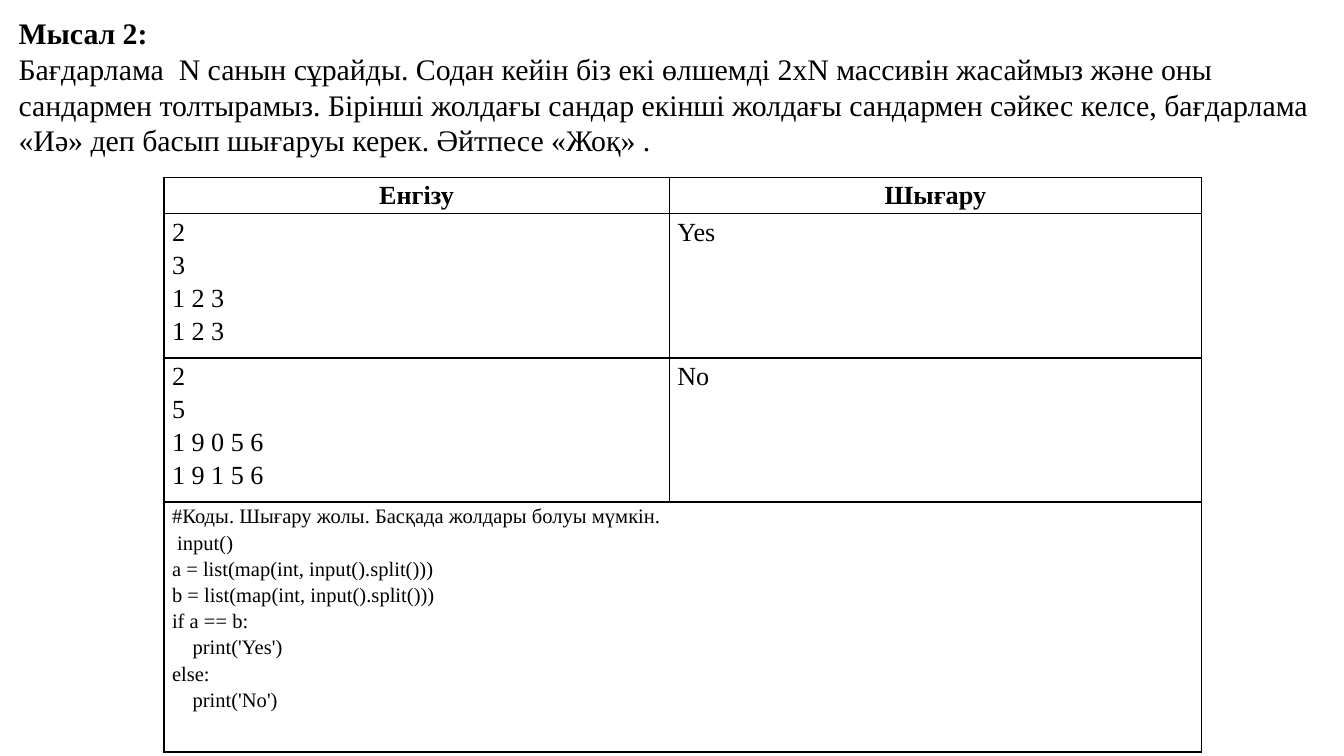
from dataclasses import dataclass

from lxml import etree
from pptx import Presentation
from pptx.dml.color import RGBColor
from pptx.enum.text import MSO_ANCHOR, PP_ALIGN
from pptx.oxml.ns import qn
from pptx.util import Emu, Inches, Pt

LEFT, CENTER = PP_ALIGN.LEFT, PP_ALIGN.CENTER
TOP = MSO_ANCHOR.TOP
SLIDE_W = Inches(10)
SLIDE_H = Emu(SLIDE_W * 9 // 16)


@dataclass(frozen=True)
class Theme:
    font: str = "Times New Roman"
    ink: str = "000000"
    task_size: int = 16
    sample_size: int = 14
    code_size: int = 11
    cell_spacing: float = 1.15
    border: int = 1


THEME = Theme()

TASK_TITLE = "Мысал 2:"
TASK_TEXT = (
    "Бағдарлама  N санын сұрайды. Содан кейін біз екі өлшемді 2xN массивін "
    "жасаймыз және оны сандармен толтырамыз. Бірінші жолдағы сандар екінші "
    "жолдағы сандармен сәйкес келсе, бағдарлама «Иә» деп басып шығаруы керек. "
    "Әйтпесе «Жоқ» ."
)
HEADINGS = ["Енгізу", "Шығару"]
SAMPLES = [
    (["2", "3", "1 2 3", "1 2 3"], ["Yes"]),
    (["2", "5", "1 9 0 5 6", "1 9 1 5 6"], ["No"]),
]
# Each code line with its indent in space widths
CODE = [
    ("#Коды. Шығару жолы. Басқада жолдары болуы мүмкін.", 0),
    ("input()", 1),
    ("a = list(map(int, input().split()))", 0),
    ("b = list(map(int, input().split()))", 0),
    ("if a == b:", 0),
    ("print('Yes')", 4),
    ("else:", 0),
    ("print('No')", 4),
]
SPACE_WIDTH = 0.25  # share of the type size

COLUMNS = [3.76, 3.96]
ROWS = [0.27, 1.07, 1.07, 1.86]


def add_line(frame, text, size, bold=False, align=LEFT, spacing=1.0, indent=0):
    """Write one paragraph, filling the frame's first one if it is free."""
    first = frame.paragraphs[0]
    paragraph = frame.add_paragraph() if first.runs else first
    paragraph.alignment = align
    paragraph.line_spacing = spacing
    if indent:
        properties = paragraph._p.get_or_add_pPr()
        properties.set("marL", str(Pt(indent * size * SPACE_WIDTH)))
        properties.set("indent", "0")
    run = paragraph.add_run()
    run.text = text
    run.font.name = THEME.font
    run.font.size = Pt(size)
    run.font.bold = bold
    run.font.color.rgb = RGBColor.from_string(THEME.ink)


def style_cell(cell):
    """Give a cell thin borders, no fill and narrow margins."""
    properties = cell._tc.get_or_add_tcPr()
    for side in ("lnL", "lnR", "lnT", "lnB"):
        line = etree.SubElement(properties, qn(f"a:{side}"), w=str(Pt(THEME.border)))
        fill = etree.SubElement(line, qn("a:solidFill"))
        etree.SubElement(fill, qn("a:srgbClr"), val=THEME.ink)
    cell.fill.background()
    cell.margin_left = cell.margin_right = Inches(0.06)
    cell.margin_top = cell.margin_bottom = 0
    cell.vertical_anchor = TOP


def add_task(slide, left, top, width, height):
    """Place the task title and its statement."""
    frame = slide.shapes.add_textbox(left, top, width, height).text_frame
    frame.word_wrap = True
    add_line(frame, TASK_TITLE, THEME.task_size, bold=True)
    add_line(frame, TASK_TEXT, THEME.task_size)


def add_samples(slide, left, top, width, height):
    """Place the table of sample inputs, outputs and the solution."""
    table = slide.shapes.add_table(
        len(ROWS), len(COLUMNS), left, top, width, height
    ).table
    table.first_row = table.horz_banding = False
    for column, share in zip(table.columns, COLUMNS):
        column.width = Emu(int(width * share / sum(COLUMNS)))
    for row, share in zip(table.rows, ROWS):
        row.height = Emu(int(height * share / sum(ROWS)))
    for cell in table.iter_cells():
        style_cell(cell)

    # Headings
    for column, heading in enumerate(HEADINGS):
        add_line(table.cell(0, column).text_frame, heading, THEME.sample_size,
                 bold=True, align=CENTER, spacing=THEME.cell_spacing)

    # Input and output samples
    for row, sample in enumerate(SAMPLES, start=1):
        for column, lines in enumerate(sample):
            for line in lines:
                add_line(table.cell(row, column).text_frame, line,
                         THEME.sample_size, spacing=THEME.cell_spacing)

    # Solution code across both columns
    last = len(ROWS) - 1
    solution = table.cell(last, 0)
    solution.merge(table.cell(last, len(COLUMNS) - 1))
    for line, indent in CODE:
        add_line(solution.text_frame, line, THEME.code_size,
                 spacing=THEME.cell_spacing, indent=indent)


def main():
    deck = Presentation()
    deck.slide_width, deck.slide_height = SLIDE_W, SLIDE_H
    slide = deck.slides.add_slide(deck.slide_layouts[6])
    add_task(slide, Inches(0.04), Inches(0.06), Inches(9.88), Inches(1.18))
    add_samples(slide, Inches(1.22), Inches(1.32),
                Inches(sum(COLUMNS)), Inches(sum(ROWS)))
    deck.save("out.pptx")


if __name__ == "__main__":
    main()
